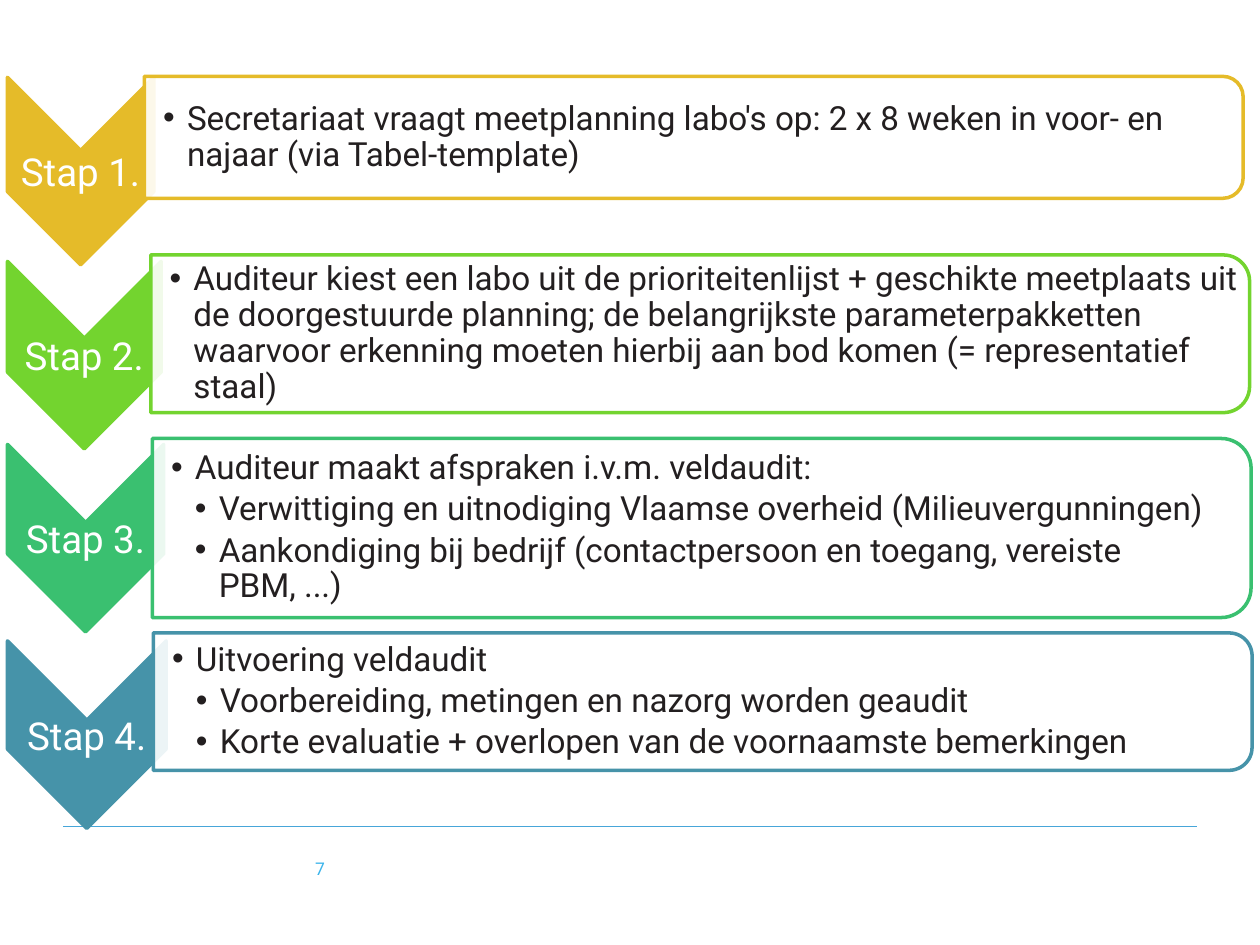
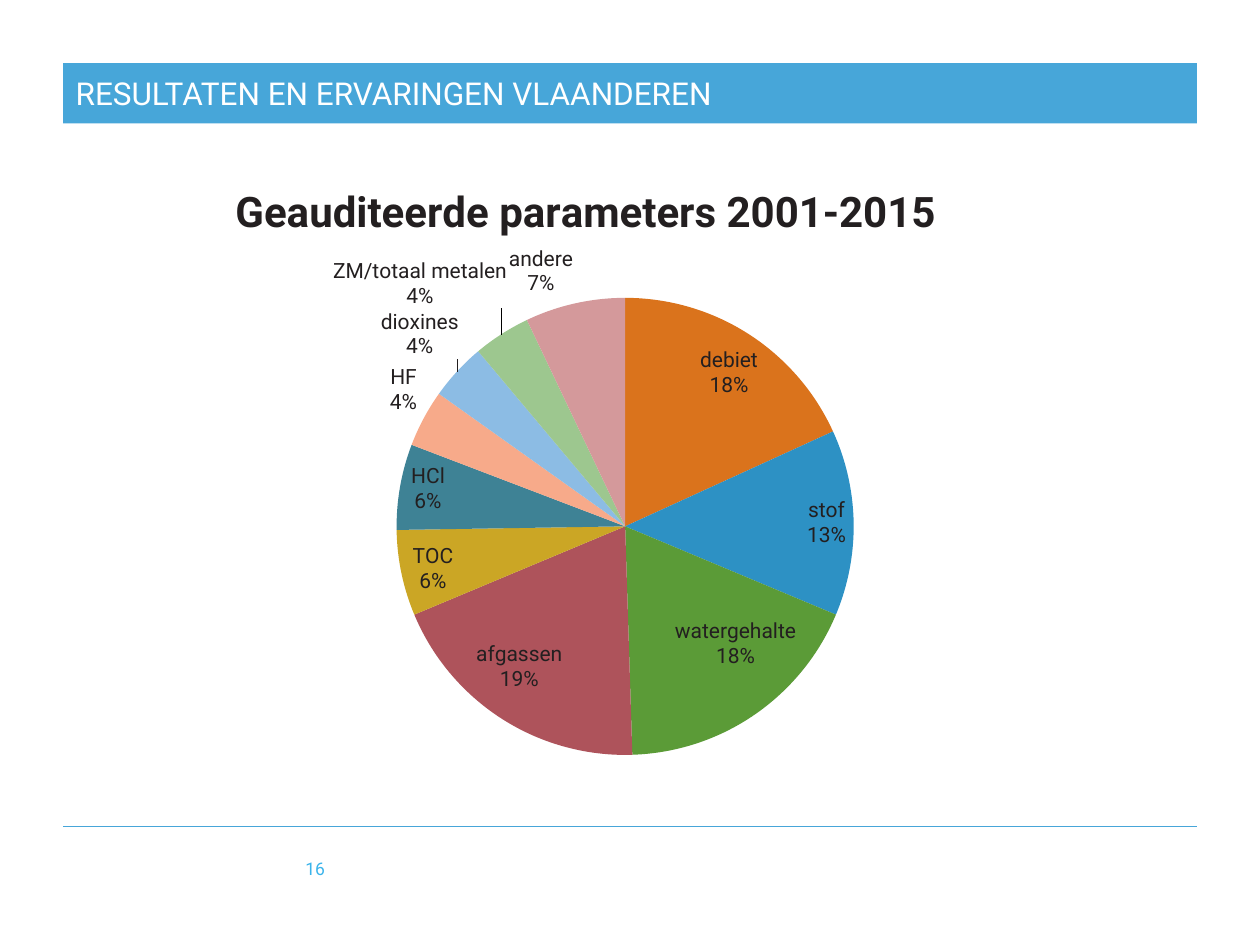
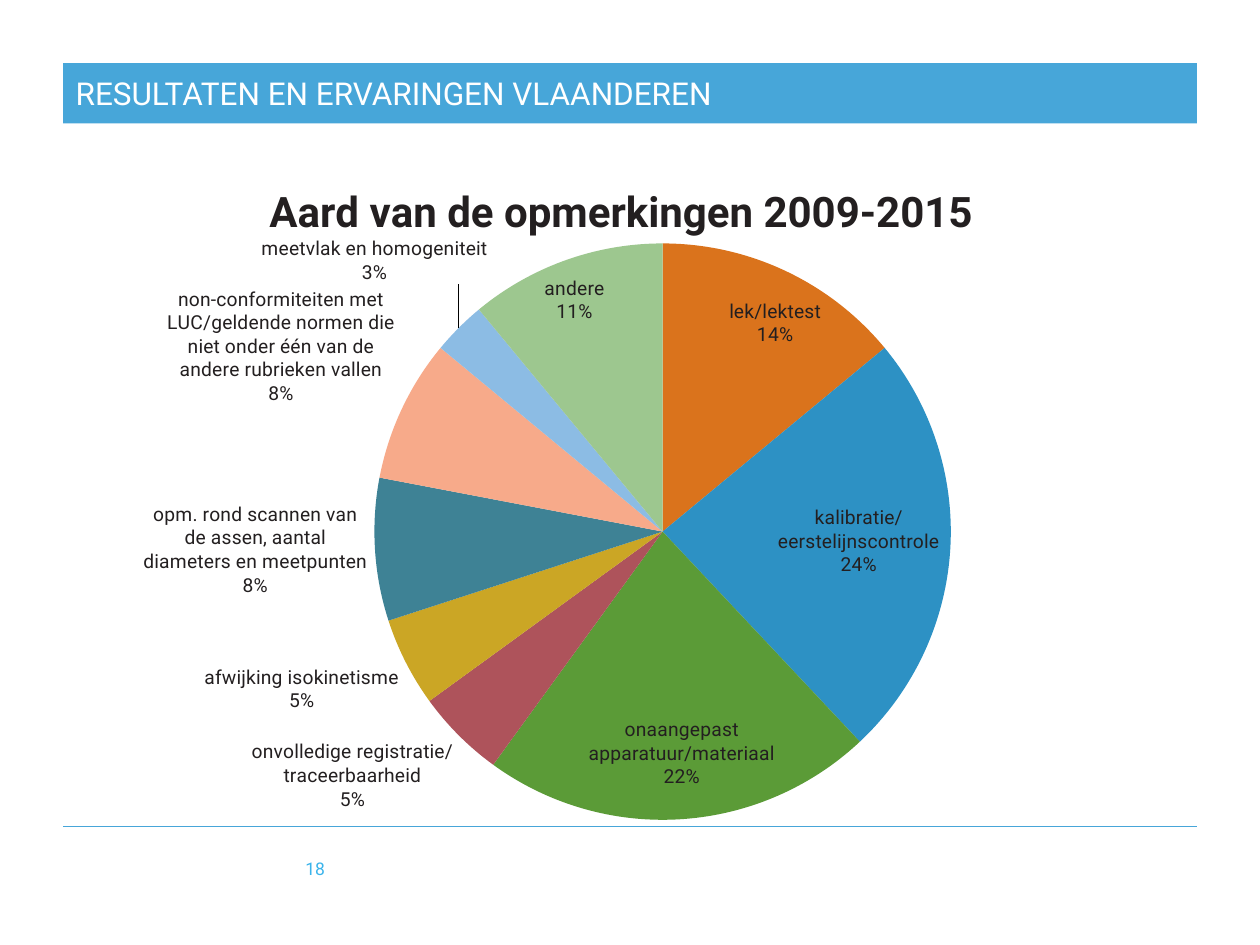
from dataclasses import dataclass

from lxml import etree
from pptx import Presentation
from pptx.chart.data import CategoryChartData
from pptx.dml.color import RGBColor
from pptx.enum.chart import XL_CHART_TYPE, XL_LABEL_POSITION
from pptx.enum.shapes import MSO_CONNECTOR, MSO_SHAPE
from pptx.enum.text import MSO_ANCHOR, MSO_AUTO_SIZE, PP_ALIGN
from pptx.oxml.ns import qn
from pptx.util import Cm, Pt

PIE = XL_CHART_TYPE.PIE
BEST_FIT = XL_LABEL_POSITION.BEST_FIT
CHEVRON = MSO_SHAPE.CHEVRON
PANEL = MSO_SHAPE.ROUND_2_SAME_RECTANGLE
STRAIGHT = MSO_CONNECTOR.STRAIGHT
MIDDLE = MSO_ANCHOR.MIDDLE
LEFT, CENTER, RIGHT = PP_ALIGN.LEFT, PP_ALIGN.CENTER, PP_ALIGN.RIGHT
COMPARISON_LAYOUT, TITLE_LAYOUT = 4, 5


@dataclass(frozen=True)
class Theme:
    font: str = "Roboto"
    ink: str = "231F20"
    white: str = "FFFFFF"
    band: str = "47A6D9"
    number: str = "3BB4EB"
    slices: tuple = ("DA731C", "2D91C4", "5B9B37", "AE535B", "CBA625",
                     "3E8295", "F7AA8A", "8CBCE4", "9DC78F", "D4999B")
    title_size: int = 18
    number_size: int = 10
    step_size: int = 22
    list_size: int = 19
    chart_title_size: int = 24


THEME = Theme()

# Lengths in cm; each list item is (level, text).
CHEVRON_LEFT, CHEVRON_HEIGHT = 0.15, 3.78
PANEL_WIDTH, TEXT_WIDTH = 22.15, 22.0
BULLET_INDENT = 0.48
STEPS = [
    {"label": "Stap 1.", "color": "E5BB29",
     "chevron_top": 1.56, "chevron_width": 2.95,
     "panel_left": 2.91, "panel_top": 1.54, "panel_height": 2.46,
     "items": [(1, "Secretariaat vraagt meetplanning labo's op: 2 x 8 weken "
                   "in voor- en najaar (via Tabel-template)")]},
    {"label": "Stap 2.", "color": "73D42F",
     "chevron_top": 5.27, "chevron_width": 3.1,
     "panel_left": 3.04, "panel_top": 5.14, "panel_height": 3.18,
     "items": [(1, "Auditeur kiest een labo uit de prioriteitenlijst + "
                   "geschikte meetplaats uit de doorgestuurde planning; de "
                   "belangrijkste parameterpakketten waarvoor erkenning "
                   "moeten hierbij aan bod komen (= representatief staal)")]},
    {"label": "Stap 3.", "color": "3AC070",
     "chevron_top": 8.96, "chevron_width": 3.15,
     "panel_left": 3.07, "panel_top": 8.84, "panel_height": 3.61,
     "items": [(1, "Auditeur maakt afspraken i.v.m. veldaudit:"),
               (2, "Verwittiging en uitnodiging Vlaamse overheid "
                   "(Milieuvergunningen)"),
               (2, "Aankondiging bij bedrijf (contactpersoon en toegang, "
                   "vereiste\nPBM, ...)")]},
    {"label": "Stap 4.", "color": "4693A9",
     "chevron_top": 12.92, "chevron_width": 3.2,
     "panel_left": 3.09, "panel_top": 12.76, "panel_height": 2.77,
     "items": [(1, "Uitvoering veldaudit"),
               (2, "Voorbereiding, metingen en nazorg worden geaudit"),
               (2, "Korte evaluatie + overlopen van de voornaamste "
                   "bemerkingen")]},
]

RESULTS_TITLE = "RESULTATEN EN ERVARINGEN VLAANDEREN"
# Positions inside a chart are fractions of its width and height.
PIES = [
    {"number": "16", "title": "Geauditeerde parameters 2001-2015",
     "frame": (3.05, 3.02, 19.3, 12.98), "title_at": (0.08, 0.04),
     "plot": (0.08, 0.23, 0.83, 0.71), "label_size": 12,
     "moved": {8: (0.01, -0.03)}, "broken": {},
     "values": [("debiet", 18), ("stof", 13), ("watergehalte", 18),
                ("afgassen", 19), ("TOC", 6), ("HCl", 6), ("HF", 4),
                ("dioxines", 4), ("ZM/totaal metalen", 4), ("andere", 7)]},
    {"number": "18", "title": "Aard van de opmerkingen 2009-2015",
     "frame": (0.89, 2.92, 23.09, 15.29), "title_at": (0.19, 0.04),
     "plot": (0.11, 0.13, 0.86, 0.76), "label_size": 11,
     "moved": {7: (0.03, -0.05)},
     "broken": {1: "kalibratie/\neerstelijnscontrole\n24%",
                3: "onvolledige registratie/\ntraceerbaarheid\n5%"},
     "values": [("lek/lektest", 14), ("kalibratie/eerstelijnscontrole", 24),
                ("onaangepast apparatuur/materiaal", 22),
                ("onvolledige registratie/traceerbaarheid", 5),
                ("afwijking isokinetisme", 5),
                ("opm. rond scannen van de assen, aantal diameters en "
                 "meetpunten", 8),
                ("non-conformiteiten met LUC/geldende normen die niet onder "
                 "één van de andere rubrieken vallen", 8),
                ("meetvlak en homogeniteit", 3), ("andere", 11)]},
]


def style_font(font, size, color, bold=False):
    font.name = THEME.font
    font.size = Pt(size)
    font.bold = bold
    font.color.rgb = RGBColor.from_string(color)


def fill_solid(shape, color):
    shape.fill.solid()
    shape.fill.fore_color.rgb = RGBColor.from_string(color)


def place(shape, left, top, width, height):
    shape.left, shape.top = Cm(left), Cm(top)
    shape.width, shape.height = Cm(width), Cm(height)


def add_label(slide, text, frame, size, color, alignment):
    box = slide.shapes.add_textbox(*map(Cm, frame))
    text_frame = box.text_frame
    text_frame.word_wrap = True
    text_frame.vertical_anchor = MIDDLE
    text_frame.text = text
    paragraph = text_frame.paragraphs[0]
    paragraph.alignment = alignment
    style_font(paragraph.runs[0].font, size, color)
    return text_frame


def add_footer(slide, number):
    line = slide.shapes.add_connector(
        STRAIGHT, Cm(1.27), Cm(16.66), Cm(24.13), Cm(16.66))
    line.line.color.rgb = RGBColor.from_string(THEME.band)
    line.line.width = Pt(0.5)
    etree.SubElement(line._element.spPr, qn("a:effectLst"))
    add_label(slide, number, (5.05, 16.99, 1.75, 1.02),
              THEME.number_size, THEME.number, RIGHT)


def add_turned_shape(slide, kind, frame, fill, outline):
    """Add a shape turned a quarter right that covers the given frame."""
    left, top, width, height = frame
    shift = (width - height) / 2
    shape = slide.shapes.add_shape(
        kind, Cm(left + shift), Cm(top - shift), Cm(height), Cm(width))
    shape.rotation = 90
    shape.shadow.inherit = False
    fill_solid(shape, fill)
    shape.line.color.rgb = RGBColor.from_string(outline)
    shape.line.width = Pt(2)
    return shape


def set_opacity(shape, percent):
    color = shape._element.spPr.find(qn("a:solidFill"))[0]
    etree.SubElement(color, qn("a:alpha"), val=str(percent * 1000))


def fill_list(placeholder, items):
    text_frame = placeholder.text_frame
    text_frame.word_wrap = True
    text_frame.auto_size = MSO_AUTO_SIZE.NONE
    text_frame.vertical_anchor = MIDDLE
    text_frame.margin_left = Cm(0.38)
    text_frame.margin_top = text_frame.margin_bottom = Cm(0.03)
    text_frame.margin_right = Cm(0.03)
    for index, (level, text) in enumerate(items):
        paragraph = (text_frame.add_paragraph() if index
                     else text_frame.paragraphs[0])
        paragraph.text = text
        paragraph.level = level
        paragraph.alignment = LEFT
        paragraph.line_spacing = 0.9
        paragraph.space_before = Pt(0)
        paragraph.space_after = Pt(3)
        properties = paragraph._p.get_or_add_pPr()
        properties.set("marL", str(Cm(BULLET_INDENT * level)))
        properties.set("indent", str(-Cm(BULLET_INDENT)))
        etree.SubElement(properties, qn("a:buChar"), char="•")
        for run in paragraph.runs:
            style_font(run.font, THEME.list_size, THEME.ink)


def add_step(slide, step, placeholder):
    chevron = (CHEVRON_LEFT, step["chevron_top"],
               step["chevron_width"], CHEVRON_HEIGHT)
    add_turned_shape(slide, CHEVRON, chevron, step["color"], step["color"])
    label = add_label(slide, step["label"], chevron,
                      THEME.step_size, THEME.white, CENTER)
    label.margin_left = label.margin_right = Cm(0.05)

    left, top, height = (step["panel_left"], step["panel_top"],
                         step["panel_height"])
    panel = add_turned_shape(slide, PANEL, (left, top, PANEL_WIDTH, height),
                             THEME.white, step["color"])
    set_opacity(panel, 90)
    place(placeholder, left, top, TEXT_WIDTH, height)
    fill_list(placeholder, step["items"])
    slide.shapes._spTree.append(placeholder._element)  # text above its panel


def add_steps_slide(presentation):
    slide = presentation.slides.add_slide(
        presentation.slide_layouts[COMPARISON_LAYOUT])
    title, *lists = list(slide.placeholders)
    slide.shapes._spTree.remove(title._element)
    add_footer(slide, "7")
    for step, placeholder in zip(STEPS, lists):
        add_step(slide, step, placeholder)


def set_title(slide, text):
    title = slide.shapes.title
    place(title, 1.27, 1.27, 22.86, 1.22)
    fill_solid(title, THEME.band)
    title.text_frame.text = text
    title.text_frame.vertical_anchor = MIDDLE
    paragraph = title.text_frame.paragraphs[0]
    paragraph.alignment = LEFT
    style_font(paragraph.runs[0].font, THEME.title_size, THEME.white)


def set_layout(parent, index, position, edge=False):
    """Give a chart part a manual position: x, y and, if known, w, h."""
    for layout in parent.findall(qn("c:layout")):
        parent.remove(layout)
    layout = etree.Element(qn("c:layout"))
    manual = etree.SubElement(layout, qn("c:manualLayout"))
    if len(position) == 4:
        etree.SubElement(manual, qn("c:layoutTarget"), val="inner")
    if edge:
        for mode in ("c:xMode", "c:yMode"):
            etree.SubElement(manual, qn(mode), val="edge")
    for name, value in zip("xywh", position):
        etree.SubElement(manual, qn(f"c:{name}"), val=str(value))
    parent.insert(index, layout)


def show_name_and_percent(labels):
    """Set what a label element shows, one part per line."""
    for name, value in (("showVal", "0"), ("showCatName", "1"),
                        ("showPercent", "1")):
        labels.find(qn(f"c:{name}")).set("val", value)
    separator = etree.Element(qn("c:separator"))
    separator.text = "\n"
    previous = labels.find(qn("c:showBubbleSize"))
    if previous is None:
        previous = labels.find(qn("c:showPercent"))
    previous.addnext(separator)


def label_slices(series, pie):
    size = pie["label_size"]
    labels = series.data_labels
    labels.show_value = False
    labels.show_category_name = labels.show_percentage = True
    labels.number_format = "0%"
    labels.number_format_is_linked = False
    labels.position = BEST_FIT
    style_font(labels.font, size, THEME.ink)

    for index, text in pie["broken"].items():
        label = series.points[index].data_label
        label.text_frame.text = text
        for paragraph in label.text_frame.paragraphs:
            style_font(paragraph.runs[0].font, size, THEME.ink)
        label.position = BEST_FIT
    for index in pie["moved"]:
        label = series.points[index].data_label
        style_font(label.font, size, THEME.ink)
        label.position = BEST_FIT

    group = series._element.find(qn("c:dLbls"))
    show_name_and_percent(group)
    for label in group.findall(qn("c:dLbl")):
        show_name_and_percent(label)
        index = int(label.find(qn("c:idx")).get("val"))
        if index in pie["moved"]:
            set_layout(label, 1, pie["moved"][index])


def add_pie_slide(presentation, pie):
    slide = presentation.slides.add_slide(
        presentation.slide_layouts[TITLE_LAYOUT])
    set_title(slide, RESULTS_TITLE)
    add_footer(slide, pie["number"])

    names, values = zip(*pie["values"])
    data = CategoryChartData()
    data.categories = names
    data.add_series("Series 1", values)
    chart = slide.shapes.add_chart(PIE, *map(Cm, pie["frame"]), data).chart
    style_font(chart.font, THEME.number_size, THEME.ink)
    chart.has_legend = False
    chart.has_title = True
    chart.chart_title.text_frame.text = pie["title"]
    style_font(chart.chart_title.text_frame.paragraphs[0].runs[0].font,
               THEME.chart_title_size, THEME.ink, bold=True)

    chart.plots[0].vary_by_categories = True
    series = chart.plots[0].series[0]
    for index, color in zip(range(len(values)), THEME.slices):
        fill_solid(series.points[index].format, color)
    label_slices(series, pie)

    body = chart._chartSpace.find(qn("c:chart"))
    set_layout(body.find(qn("c:title")), 1, pie["title_at"], edge=True)
    set_layout(body.find(qn("c:plotArea")), 0, pie["plot"], edge=True)
    background = etree.Element(qn("c:spPr"))
    etree.SubElement(background, qn("a:noFill"))
    outline = etree.SubElement(background, qn("a:ln"))
    etree.SubElement(outline, qn("a:noFill"))
    body.addnext(background)


def main():
    presentation = Presentation()
    presentation.slide_width, presentation.slide_height = Cm(25.4), Cm(19.05)
    add_steps_slide(presentation)
    for pie in PIES:
        add_pie_slide(presentation, pie)
    presentation.save("out.pptx")


if __name__ == "__main__":
    main()
